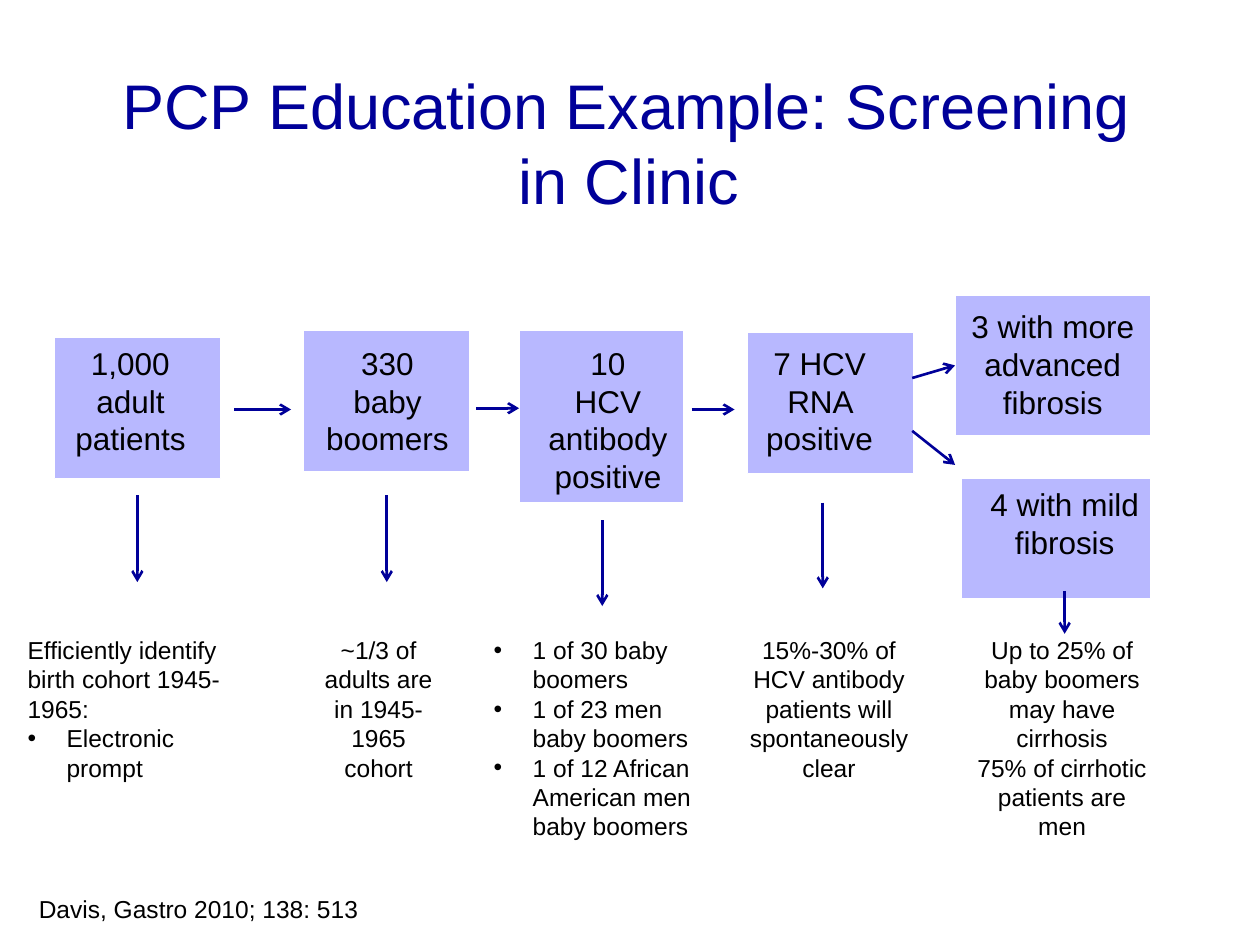
from lxml import etree
from pptx import Presentation
from pptx.dml.color import RGBColor
from pptx.enum.shapes import MSO_CONNECTOR, MSO_SHAPE
from pptx.enum.text import MSO_ANCHOR, PP_ALIGN
from pptx.oxml.ns import qn
from pptx.util import Inches, Pt

RECTANGLE = MSO_SHAPE.RECTANGLE
STRAIGHT = MSO_CONNECTOR.STRAIGHT
CENTER, LEFT = PP_ALIGN.CENTER, PP_ALIGN.LEFT
MIDDLE, TOP = MSO_ANCHOR.MIDDLE, MSO_ANCHOR.TOP
FONT = "Arial"
NAVY, LILAC, BLACK, WHITE = "000099", "B8B8FF", "000000", "FFFFFF"
NOTE_TOP = 4.99

STAGES = [
    ((0.43, 2.68, 1.32, 1.12), (0.43, 2.68, 1.21, 1.01), "1,000 adult patients"),
    ((2.41, 2.62, 1.32, 1.12), (2.47, 2.68, 1.21, 1.01), "330 baby boomers"),
    ((4.12, 2.62, 1.31, 1.37), (4.22, 2.68, 1.21, 1.31), "10\vHCV antibody positive"),
    ((5.93, 2.64, 1.32, 1.12), (5.9, 2.68, 1.21, 1.01), "7 HCV RNA positive"),
    ((7.58, 2.34, 1.55, 1.12), (7.58, 2.39, 1.55, 1.01), "3 with more advanced fibrosis"),
    ((7.63, 3.8, 1.5, 0.95), (7.67, 3.8, 1.56, 0.71), "4 with mild fibrosis"),
]

NOTES = [
    (0.12, 1.79, 1.58, LEFT,
     ["Efficiently identify birth cohort 1945-1965:", "• Electronic prompt"]),
    (2.4, 1.21, 1.28, CENTER, ["~1/3 of adults are in 1945-1965 cohort"]),
    (3.82, 2, 1.75, LEFT,
     ["• 1 of 30 baby boomers", "• 1 of 23 men baby boomers",
      "• 1 of 12 African American men baby boomers"]),
    (5.83, 1.5, 1.28, CENTER,
     ["15%-30% of HCV antibody patients will spontaneously clear"]),
    (7.63, 1.6, 1.75, CENTER,
     ["Up to 25% of baby boomers may have", "cirrhosis",
      "75% of cirrhotic patients are men"]),
]

ARROWS = [
    (1.86, 3.25, 2.31, 3.25),
    (3.78, 3.24, 4.12, 3.24),
    (5.49, 3.25, 5.83, 3.25),
    (7.24, 3, 7.58, 2.9),
    (7.24, 3.42, 7.58, 3.69),
    (1.09, 3.93, 1.09, 4.62),
    (3.07, 3.93, 3.07, 4.62),
    (4.78, 4.13, 4.78, 4.81),
    (6.53, 3.99, 6.53, 4.67),
    (8.45, 4.69, 8.45, 5.03),
]


def color(value):
    return RGBColor.from_string(value)


def inches(box):
    return [Inches(length) for length in box]


def format_runs(para, size, ink):
    for span in para.runs:
        span.font.name = FONT
        span.font.size = Pt(size)
        span.font.color.rgb = color(ink)


def add_bullet(para):
    properties = para._p.get_or_add_pPr()
    properties.set("marL", str(Inches(0.31)))
    properties.set("indent", str(-Inches(0.31)))
    bullet_font = etree.SubElement(properties, qn("a:buFont"))
    bullet_font.set("typeface", FONT)
    bullet = etree.SubElement(properties, qn("a:buChar"))
    bullet.set("char", "•")


def add_text(page, box, lines, size, align):
    frame = page.shapes.add_textbox(*inches(box)).text_frame
    frame.word_wrap = True
    frame.vertical_anchor = TOP
    for index, line in enumerate(lines):
        para = frame.add_paragraph() if index else frame.paragraphs[0]
        para.text = line.removeprefix("• ")
        para.alignment = align
        if line.startswith("• "):
            add_bullet(para)
        format_runs(para, size, BLACK)


def add_title(page, box, text):
    title = page.shapes.title
    title.left, title.top, title.width, title.height = inches(box)
    frame = title.text_frame
    frame.text = text
    frame.word_wrap = True
    frame.vertical_anchor = MIDDLE
    frame.margin_left = frame.margin_top = frame.margin_bottom = Inches(0.06)
    frame.margin_right = Inches(0.1)
    para = frame.paragraphs[0]
    para.alignment = CENTER
    properties = para._p.get_or_add_pPr()
    properties.set("marL", str(Inches(0.04)))
    properties.set("indent", str(-Inches(0.04)))
    format_runs(para, 36, NAVY)


def add_stage(page, box, label_box, label):
    panel = page.shapes.add_shape(RECTANGLE, *inches(box))
    panel.shadow.inherit = False
    panel.fill.solid()
    panel.fill.fore_color.rgb = color(LILAC)
    panel.line.color.rgb = color(WHITE)
    panel.line.width = Pt(0.75)
    add_text(page, label_box, [label], 18, CENTER)


def add_arrow(page, ends):
    arrow = page.shapes.add_connector(STRAIGHT, *inches(ends))
    arrow.line.color.rgb = color(NAVY)
    arrow.line.width = Pt(1.5)
    head = etree.SubElement(arrow.line._get_or_add_ln(), qn("a:tailEnd"))
    head.set("type", "arrow")
    etree.SubElement(arrow._element.spPr, qn("a:effectLst"))


def main():
    deck = Presentation()
    deck.slide_width, deck.slide_height = Inches(10), Inches(7.5)
    page = deck.slides.add_slide(deck.slide_layouts[5])
    add_title(page, (0.74, 0.25, 8.5, 1.75),
              "PCP Education Example: Screening in Clinic")
    for box, label_box, label in STAGES:
        add_stage(page, box, label_box, label)
    for left, width, height, align, lines in NOTES:
        add_text(page, (left, NOTE_TOP, width, height), lines, 14, align)
    for ends in ARROWS:
        add_arrow(page, ends)
    add_text(page, (0.21, 7.05, 3.36, 0.34),
             ["Davis, Gastro 2010; 138: 513"], 14, LEFT)
    deck.save("out.pptx")


if __name__ == "__main__":
    main()
